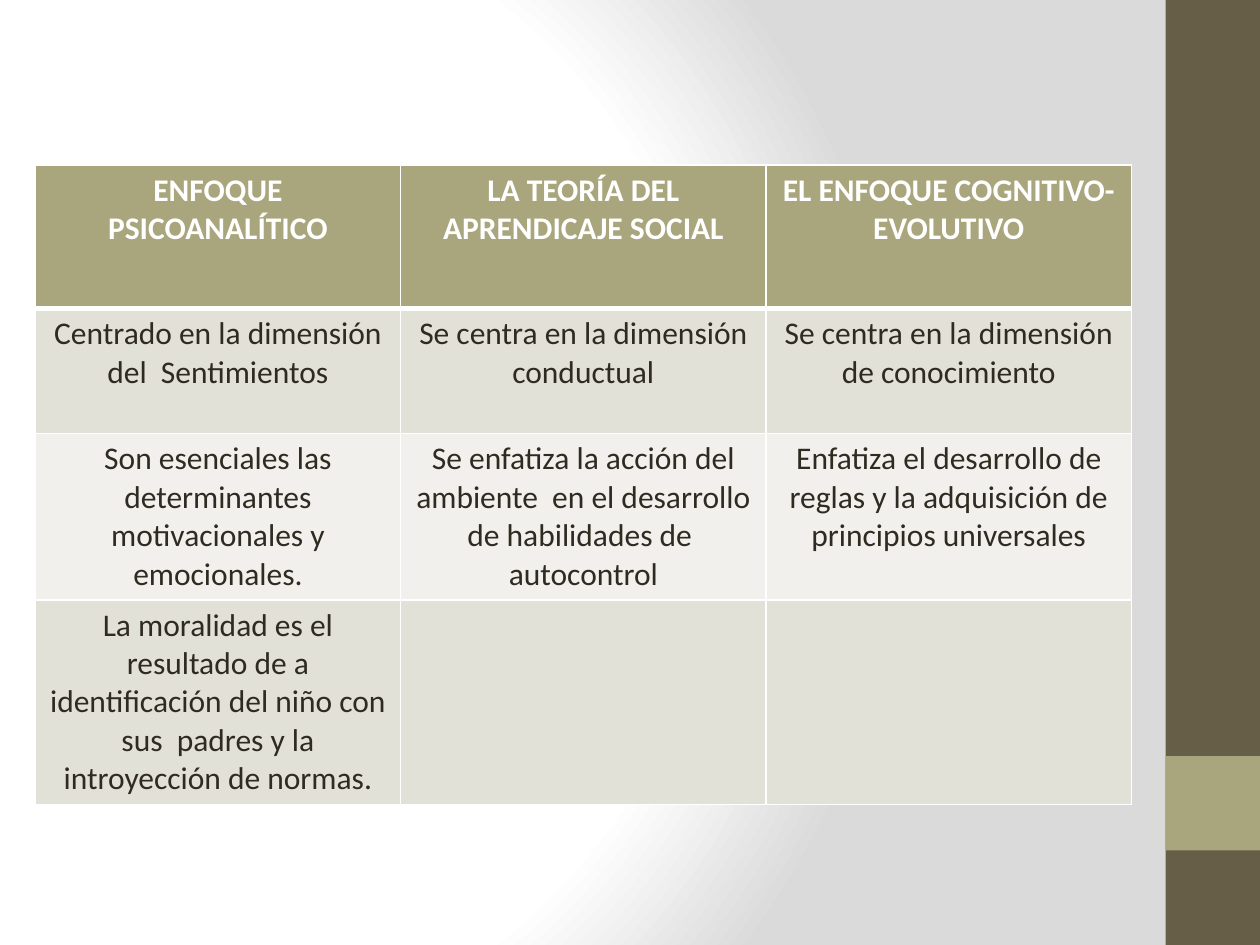
from dataclasses import dataclass

import lxml.etree
import pptx
import pptx.dml.color
import pptx.enum.shapes
import pptx.enum.text
import pptx.oxml
import pptx.oxml.ns
import pptx.util

RGBColor = pptx.dml.color.RGBColor
Inches = pptx.util.Inches

WHITE = RGBColor(0xFF, 0xFF, 0xFF)
GREY = RGBColor(0xDA, 0xDA, 0xDA)
BROWN = RGBColor(0x67, 0x5E, 0x47)
OLIVE = RGBColor(0xA9, 0xA5, 0x7C)
INK = RGBColor(0x2F, 0x2B, 0x20)
BAND_DARK = RGBColor(0xE2, 0xE1, 0xD7)
BAND_LIGHT = RGBColor(0xF1, 0xF0, 0xEC)

SLIDE_WIDTH, SLIDE_HEIGHT = Inches(10), Inches(7.5)
TABLE_LEFT, TABLE_TOP = Inches(0.28), Inches(1.31)
TABLE_HEIGHT = Inches(5.03)
COLUMN_WIDTH = Inches(2.9)


@dataclass(frozen=True)
class SidePanel:
    """A block on the right edge, placed by shares of the slide's size."""
    top: float
    height: float
    color: RGBColor
    left: float = 0.925
    width: float = 0.075


@dataclass(frozen=True)
class ApproachRow:
    height: float
    fill: RGBColor
    texts: tuple[str, str, str]
    color: RGBColor = INK
    bold: bool = False
    bottom_line: float = 1


PANELS = (SidePanel(0, 1, BROWN), SidePanel(0.8, 0.1, OLIVE))

ROWS = (
    ApproachRow(1.14, OLIVE, (
        "ENFOQUE PSICOANALÍTICO",
        "LA TEORÍA DEL APRENDICAJE SOCIAL",
        "EL ENFOQUE COGNITIVO-EVOLUTIVO",
    ), WHITE, True, 3),
    ApproachRow(0.99, BAND_DARK, (
        "Centrado en la dimensión del  Sentimientos",
        "Se centra en la dimensión conductual",
        "Se centra en la dimensión de conocimiento",
    )),
    ApproachRow(0.99, BAND_LIGHT, (
        "Son esenciales las determinantes motivacionales y emocionales.",
        "Se enfatiza la acción del ambiente  en el desarrollo de habilidades de  autocontrol",
        "Enfatiza el desarrollo de reglas y la adquisición de principios universales",
    )),
    ApproachRow(0.99, BAND_DARK, (
        "La moralidad es el resultado de a identificación del niño con sus  padres "
        "y la introyección de normas.",
        "",
        "",
    )),
)


def paint_background(slide) -> None:
    """Fill the background with a circular gradient, white to grey."""
    fill = slide.background.fill
    fill.gradient()
    gradient = slide.background._cSld.find(".//" + pptx.oxml.ns.qn("a:gradFill"))
    for child in list(gradient):
        gradient.remove(child)
    stops = "".join(
        f'<a:gs pos="{share * 1000}"><a:srgbClr val="{color}"/></a:gs>'
        for share, color in ((0, WHITE), (75, WHITE), (100, GREY))
    )
    parts = pptx.oxml.parse_xml(
        f'<a:gradFill {pptx.oxml.ns.nsdecls("a")}><a:gsLst>{stops}</a:gsLst>'
        '<a:path path="circle">'
        '<a:fillToRect l="20000" t="50000" r="100000" b="50000"/>'
        '</a:path></a:gradFill>'
    )
    gradient.extend(list(parts))


def draw_panel(slide, panel: SidePanel) -> None:
    block = slide.shapes.add_shape(
        pptx.enum.shapes.MSO_SHAPE.RECTANGLE,
        int(SLIDE_WIDTH * panel.left), int(SLIDE_HEIGHT * panel.top),
        int(SLIDE_WIDTH * panel.width), int(SLIDE_HEIGHT * panel.height),
    )
    block.shadow.inherit = False
    block.fill.solid()
    block.fill.fore_color.rgb = panel.color
    block.line.fill.background()


def add_borders(cell, top: float, bottom: float) -> None:
    properties = cell._tc.get_or_add_tcPr()
    for side, points in {"L": 1, "R": 1, "T": top, "B": bottom}.items():
        properties.append(pptx.oxml.parse_xml(
            f'<a:ln{side} {pptx.oxml.ns.nsdecls("a")} w="{pptx.util.Pt(points)}">'
            f'<a:solidFill><a:srgbClr val="{WHITE}"/></a:solidFill></a:ln{side}>'
        ))


def fill_cell(cell, text: str, row: ApproachRow, top_line: float) -> None:
    add_borders(cell, top_line, row.bottom_line)
    cell.fill.solid()
    cell.fill.fore_color.rgb = row.fill
    if not text:
        return
    paragraph = cell.text_frame.paragraphs[0]
    paragraph.alignment = pptx.enum.text.PP_ALIGN.CENTER
    run = paragraph.add_run()
    run.text = text
    font_format = {"name": "Calibri", "size": pptx.util.Pt(18), "bold": row.bold}
    for attribute, value in font_format.items():
        setattr(run.font, attribute, value)
    run.font.color.rgb = row.color


def draw_approaches(slide, rows: tuple[ApproachRow, ...]) -> None:
    column_count = len(rows[0].texts)
    table = slide.shapes.add_table(
        len(rows), column_count, TABLE_LEFT, TABLE_TOP,
        COLUMN_WIDTH * column_count, TABLE_HEIGHT,
    ).table
    for column in table.columns:
        column.width = COLUMN_WIDTH
    top_line = 1
    for index, row in enumerate(rows):
        table.rows[index].height = Inches(row.height)
        for cell, text in zip(table.rows[index].cells, row.texts):
            fill_cell(cell, text, row, top_line)
        top_line = row.bottom_line


def main() -> None:
    presentation = pptx.Presentation()
    presentation.slide_width = SLIDE_WIDTH
    presentation.slide_height = SLIDE_HEIGHT
    slide = presentation.slides.add_slide(presentation.slide_layouts[6])
    paint_background(slide)
    for panel in PANELS:
        draw_panel(slide, panel)
    draw_approaches(slide, ROWS)
    presentation.save("out.pptx")


if __name__ == "__main__":
    main()
